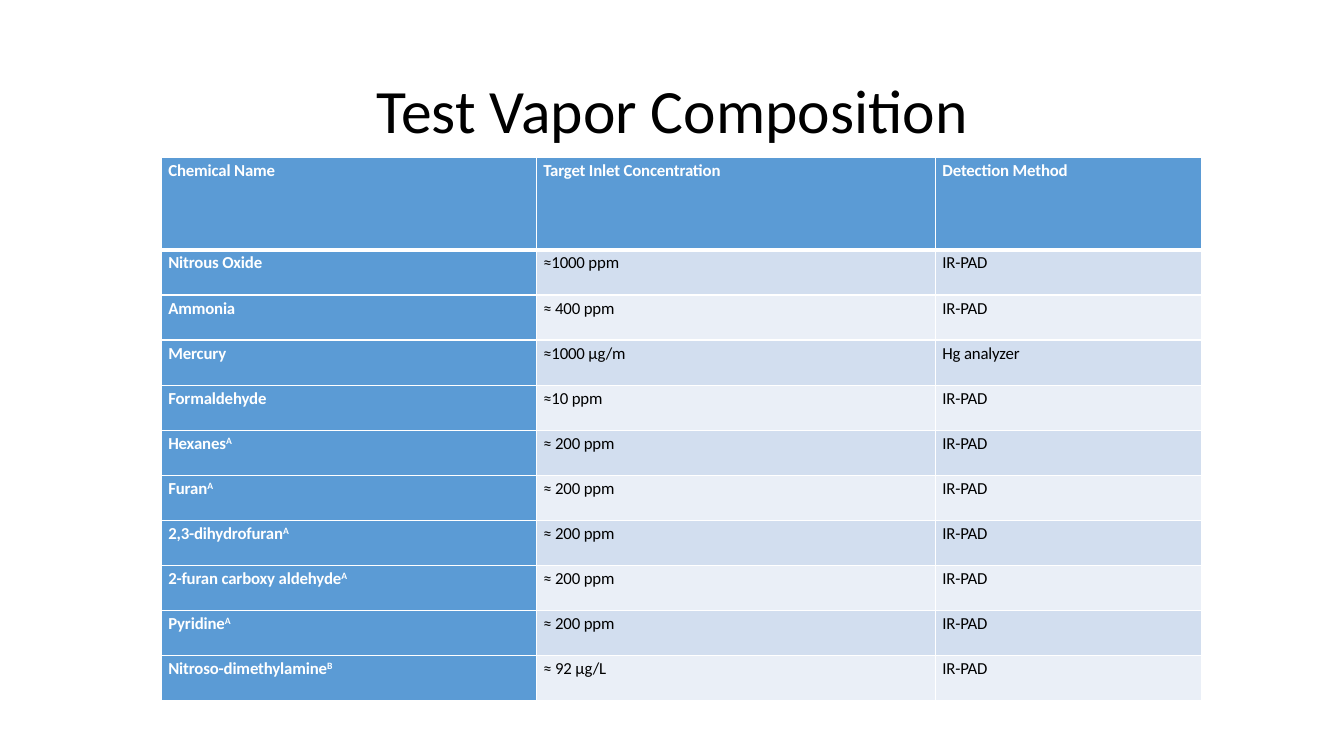
from lxml.etree import SubElement
from pptx import Presentation
from pptx.dml.color import RGBColor
from pptx.enum.text import MSO_ANCHOR as Anchor, PP_ALIGN as Align
from pptx.oxml import parse_xml
from pptx.oxml.ns import nsdecls, qn
from pptx.util import Inches, Pt

WHITE, BLACK, BLUE = "FFFFFF", "000000", "5B9BD5"
BANDS = ("D2DEEF", "EAEFF7")

HEADINGS = ("Chemical Name", "Target Inlet Concentration", "Detection Method")
# chemical, footnote mark, concentration, detection method
VAPORS = (
    ("Nitrous Oxide", "", "≈1000 ppm", "IR-PAD"),
    ("Ammonia", "", "≈ 400 ppm", "IR-PAD"),
    ("Mercury", "", "≈1000 µg/m", "Hg analyzer"),
    ("Formaldehyde", "", "≈10 ppm", "IR-PAD"),
    ("Hexanes", "A", "≈ 200 ppm", "IR-PAD"),
    ("Furan", "A", "≈ 200 ppm", "IR-PAD"),
    ("2,3-dihydrofuran", "A", "≈ 200 ppm", "IR-PAD"),
    ("2-furan carboxy aldehyde", "A", "≈ 200 ppm", "IR-PAD"),
    ("Pyridine", "A", "≈ 200 ppm", "IR-PAD"),
    ("Nitroso-dimethylamine", "B", "≈ 92 µg/L", "IR-PAD"),
)


def color(hex_code):
    return RGBColor.from_string(hex_code)


class SlideBuilder:
    """Places elements on a grid of 100 columns by 100 rows."""

    font_name = "Calibri"

    def __init__(self, deck):
        self.slide = deck.slides.add_slide(deck.slide_layouts[6])
        self.column = deck.slide_width / 100
        self.row = deck.slide_height / 100

    def across(self, columns):
        return round(columns * self.column)

    def down(self, rows):
        return round(rows * self.row)

    def box(self, left, top, width, height):
        return self.across(left), self.down(top), self.across(width), self.down(height)

    def style_run(self, run, size, hex_code, bold=False):
        font = run.font
        font.name, font.size, font.bold = self.font_name, Pt(size), bold
        font.color.rgb = color(hex_code)

    def title(self, wording, place):
        frame = self.slide.shapes.add_textbox(*self.box(*place)).text_frame
        frame.word_wrap = True
        frame.vertical_anchor = Anchor.MIDDLE
        frame.text = wording
        paragraph = frame.paragraphs[0]
        paragraph.alignment, paragraph.line_spacing = Align.CENTER, 0.9
        self.style_run(paragraph.runs[0], 44, BLACK)

    def table(self, headings, records, corner, widths, heading_height, record_height):
        height = heading_height + record_height * len(records)
        place = self.box(*corner, sum(widths), height)
        table = self.slide.shapes.add_table(len(records) + 1, len(headings), *place).table
        for column, width in zip(table.columns, widths):
            column.width = self.across(width)
        for row in table.rows:
            row.height = self.down(record_height)
        table.rows[0].height = self.down(heading_height)

        for c, heading in enumerate(headings):
            self.cell(table.cell(0, c), heading, BLUE, WHITE, bottom=3)
        for r, (chemical, mark, *details) in enumerate(records, 1):
            top = 3 if r == 1 else 1
            self.cell(table.cell(r, 0), chemical, BLUE, WHITE, mark, top=top)
            for c, detail in enumerate(details, 1):
                self.cell(table.cell(r, c), detail, BANDS[(r - 1) % 2], BLACK, top=top)

    def cell(self, cell, wording, fill, ink, mark="", top=1, bottom=1):
        cell.margin_left = cell.margin_right = Inches(0.07)
        cell.margin_top = cell.margin_bottom = 0
        cell.fill.solid()
        cell.fill.fore_color.rgb = color(fill)
        self.borders(cell, L=1, R=1, T=top, B=bottom)

        cell.text_frame.text = wording
        paragraph = cell.text_frame.paragraphs[0]
        paragraph.line_spacing, paragraph.space_after = 1.15, Pt(10)
        if mark:
            paragraph.add_run().text = mark
        for run in paragraph.runs:
            self.style_run(run, 12, ink, bold=ink == WHITE)
            run.font._element.set("spc", "-10")
        if mark:
            paragraph.runs[-1].font._element.set("baseline", "30000")

    def borders(self, cell, **sides):
        properties = cell._tc.get_or_add_tcPr()
        for position, (side, points) in enumerate(sides.items()):
            line = parse_xml(f'<a:ln{side} {nsdecls("a")} w="{Pt(points)}"/>')
            paint = SubElement(line, qn("a:solidFill"))
            SubElement(paint, qn("a:srgbClr"), val=WHITE)
            properties.insert(position, line)


def main():
    deck = Presentation()
    deck.slide_width, deck.slide_height = Inches(13.33), Inches(7.5)
    builder = SlideBuilder(deck)
    builder.title("Test Vapor Composition", (6.9, 5.33, 86.27, 19.33))
    builder.table(HEADINGS, VAPORS, corner=(12, 20.8), widths=(27.9, 29.7, 19.8),
                  heading_height=12.27, record_height=5.96)
    deck.save("out.pptx")


if __name__ == "__main__":
    main()
